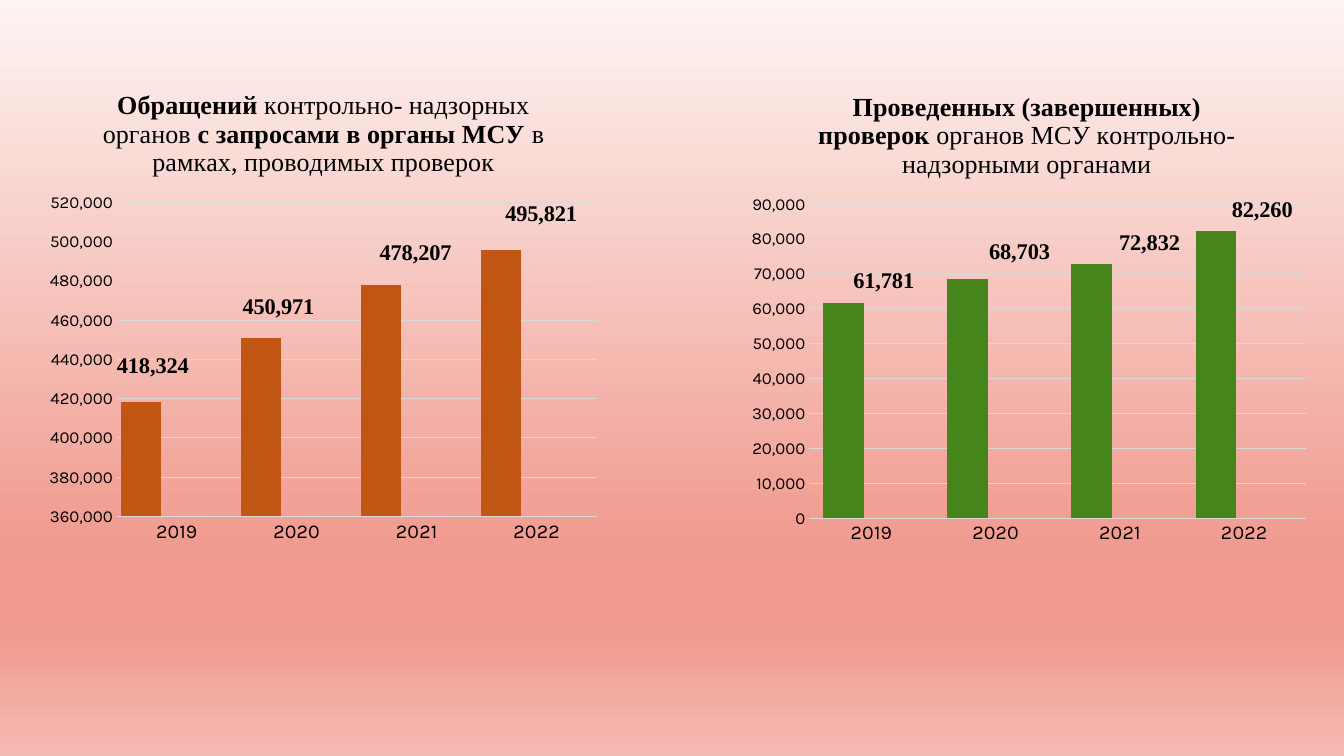
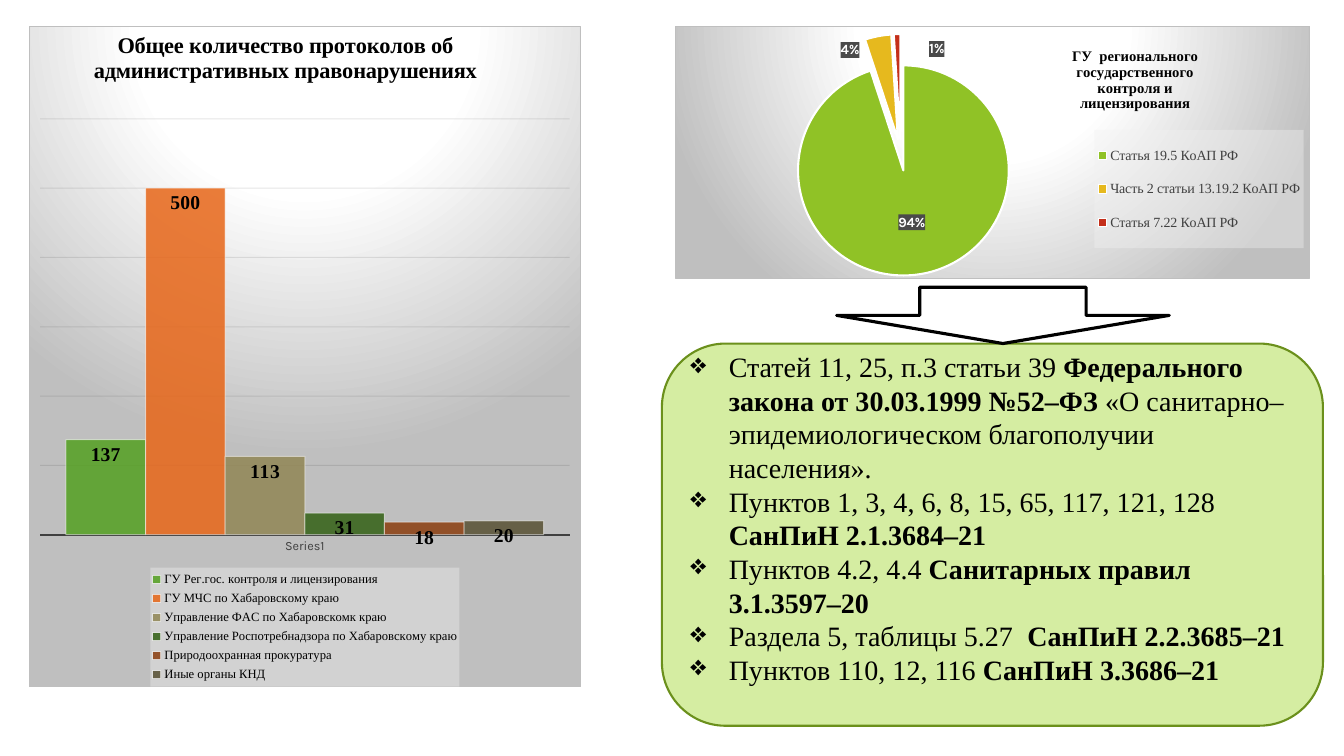
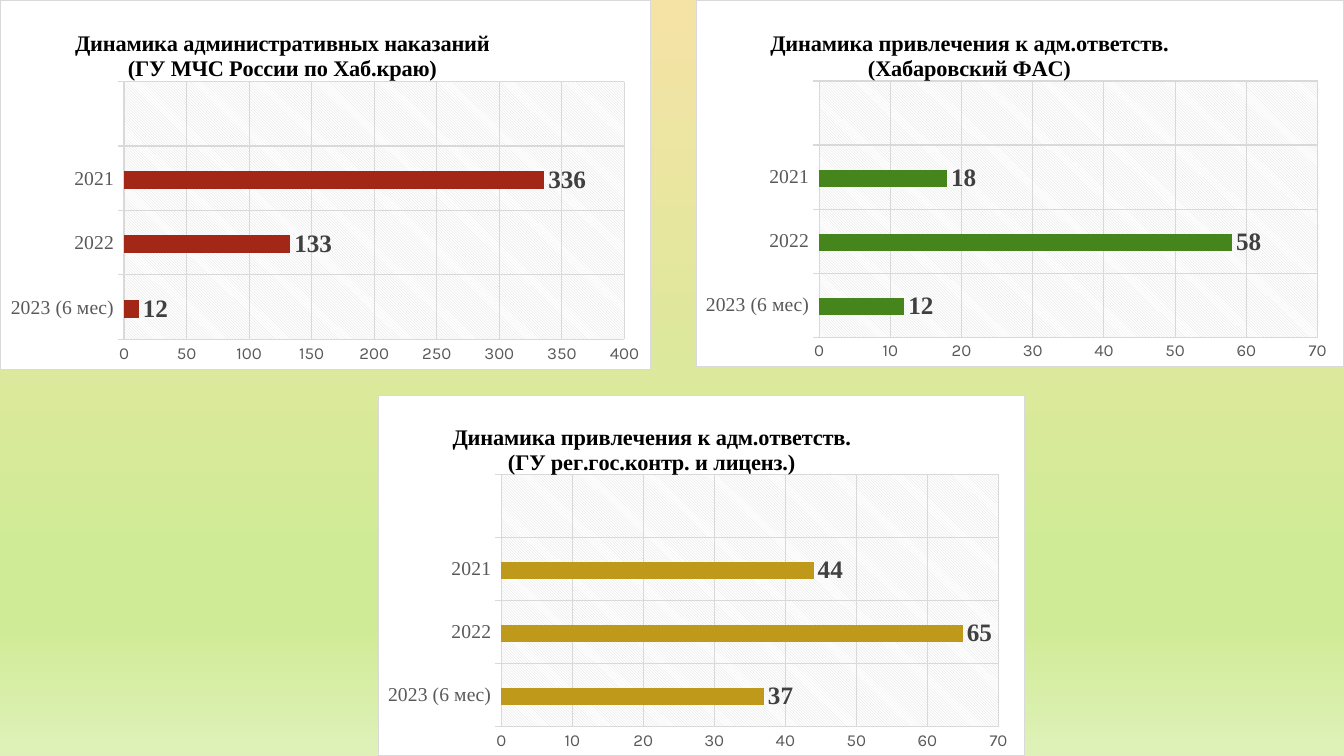
"""Three slides of charts on inspections, protocols and penalties."""
from pptx import Presentation
from pptx.chart.data import CategoryChartData
from pptx.dml.color import RGBColor
from pptx.enum.chart import XL_CHART_TYPE as Kind
from pptx.enum.chart import XL_LABEL_POSITION as LabelPlace
from pptx.enum.chart import XL_LEGEND_POSITION as LegendPlace
from pptx.enum.chart import XL_TICK_MARK as Tick
from pptx.enum.shapes import MSO_SHAPE as Shape
from pptx.enum.text import MSO_ANCHOR as Anchor
from pptx.enum.text import PP_ALIGN as Align
from pptx.oxml import parse_xml
from pptx.oxml.ns import nsdecls, qn
from pptx.util import Inches, Pt

BLACK = RGBColor(0x00, 0x00, 0x00)
WHITE = RGBColor(0xFF, 0xFF, 0xFF)
INK = RGBColor(0x40, 0x40, 0x40)
GREY = RGBColor(0x59, 0x59, 0x59)
RULE = RGBColor(0xD9, 0xD9, 0xD9)
NEAR_BLACK = RGBColor(0x0D, 0x0D, 0x0D)
RUST = RGBColor(0xC0, 0x55, 0x14)
GREEN = RGBColor(0x46, 0x85, 0x1B)
RED = RGBColor(0xA3, 0x27, 0x16)
GOLD = RGBColor(0xBF, 0x99, 0x19)
LEAF = RGBColor(0x54, 0xA0, 0x21)
ORANGE = RGBColor(0xE7, 0x66, 0x18)
KHAKI = RGBColor(0x91, 0x86, 0x55)
FOREST = RGBColor(0x32, 0x60, 0x14)
BROWN = RGBColor(0x8B, 0x3D, 0x0E)
OLIVE = RGBColor(0x57, 0x50, 0x33)
LIME = RGBColor(0x90, 0xC2, 0x26)
YELLOW = RGBColor(0xE6, 0xB9, 0x1E)
SCARLET = RGBColor(0xC4, 0x2F, 0x1A)
PALE_LIME = RGBColor(0xD5, 0xED, 0xA2)
MOSS = RGBColor(0x6B, 0x90, 0x1C)
SERIF, SANS = "Times New Roman", "Karla"

SPACES = nsdecls("c", "a")
STOP = '<a:gs pos="{}000"><a:srgbClr val="{}"/></a:gs>'
PAGE_FILL = ('<p:bg ' + nsdecls("p", "a") + '><p:bgPr><a:gradFill rotWithShape="1"><a:gsLst>{}</a:gsLst>'
             '<a:lin ang="5400000" scaled="0"/></a:gradFill><a:effectLst/></p:bgPr></p:bg>')
FILLED = '<c:spPr ' + SPACES + '>{}</c:spPr>'
SOLID = '<a:solidFill><a:srgbClr val="{}"/></a:solidFill>'
BORDER = '<a:ln w="9525">' + SOLID + '</a:ln>'
CLEAR = FILLED.format('<a:noFill/><a:ln><a:noFill/></a:ln>')
CARD = FILLED.format(SOLID.format("FFFFFF") + BORDER.format("D9D9D9"))
GLOW = FILLED.format(
    '<a:gradFill><a:gsLst>'
    + "".join(STOP.format(*stop) for stop in ((0, "FFFFFF"), (39, "FFFFFF"), (100, "BFBFBF")))
    + '</a:gsLst><a:path path="circle"><a:fillToRect l="50000" t="-80000" r="50000" b="180000"/>'
    '</a:path></a:gradFill>' + BORDER.format("BFBFBF"))
HATCH = FILLED.format(
    '<a:pattFill prst="ltDnDiag"><a:fgClr><a:srgbClr val="D9D9D9"/></a:fgClr>'
    '<a:bgClr><a:srgbClr val="FFFFFF"/></a:bgClr></a:pattFill><a:ln><a:noFill/></a:ln>')
VEIL = FILLED.format('<a:solidFill><a:srgbClr val="F2F2F2"><a:alpha val="39000"/></a:srgbClr></a:solidFill>')
TAG = FILLED.format(SOLID.format("4A4A4A"))
ALPHA = '<a:alpha ' + nsdecls("a") + ' val="{}000"/>'
LAYOUT = '<c:layout ' + SPACES + '><c:manualLayout>{}</c:manualLayout></c:layout>'
EDGES = '<c:xMode val="edge"/><c:yMode val="edge"/>'
SPOT = '<c:x val="{}"/><c:y val="{}"/>'
SHIFT = LAYOUT.format(SPOT)
TITLE_SPOT = LAYOUT.format(EDGES + SPOT)
AREA = EDGES + SPOT + '<c:w val="{}"/><c:h val="{}"/>'
LEGEND_AREA = LAYOUT.format(AREA)
PLOT_AREA = LAYOUT.format('<c:layoutTarget val="inner"/>' + AREA)

deck = Presentation()
deck.slide_width, deck.slide_height = Inches(13.33), Inches(7.5)
COL, ROW = deck.slide_width / 160, deck.slide_height / 90


def set_font(font, size, color, bold=False, name=SERIF):
    font.size, font.bold, font.name = Pt(size), bold, name
    font.color.rgb = color


def place_chart(page, kind, place, cats, series, title, size, title_at, plot_at, backdrop, digits="#,##0"):
    data = CategoryChartData(number_format=digits)
    data.categories = cats
    for name, values in series:
        data.add_series(name, values)
    left, top, width, height = place
    chart = page.shapes.add_chart(kind, int(left * COL), int(top * ROW),
                                  int(width * COL), int(height * ROW), data).chart
    set_font(chart.font, 10, BLACK, name=SANS)
    chart.has_legend = False
    chart.has_title = True
    frame = chart.chart_title.text_frame
    for index, line in enumerate(title):
        para = frame.add_paragraph() if index else frame.paragraphs[0]
        para.alignment = Align.CENTER
        for text, bold in line:
            span = para.add_run()
            span.text = text
            set_font(span.font, size, BLACK, bold)
    heading = chart.chart_title._element
    body = chart._chartSpace.find(qn("c:chart"))
    area = body.find(qn("c:plotArea"))
    for owner in (heading, area):
        for stale in owner.findall(qn("c:layout")):
            owner.remove(stale)
    heading.find(qn("c:tx")).addnext(parse_xml(TITLE_SPOT.format(*title_at)))
    area.insert(0, parse_xml(PLOT_AREA.format(*plot_at)))
    body.addnext(parse_xml(backdrop))
    if kind != Kind.PIE:
        chart.plots[0].vary_by_categories = False
        cat_axis, val_axis = chart.category_axis, chart.value_axis
        cat_axis.major_tick_mark = val_axis.major_tick_mark = Tick.NONE
        val_axis.has_major_gridlines = True
        val_axis.format.line.fill.background()
        for line in (cat_axis.format.line, val_axis.major_gridlines.format.line):
            line.color.rgb, line.width = RULE, Pt(0.75)
    return chart


pages = []
for stops in (((0, "FDF4F2"), (74, "F0998D"), (83, "F0998D"), (100, "F5BBB3")),
              ((0, "FFFFFF"), (100, "FFFFFF")),
              ((0, "F5E3A5"), (74, "D0EB96"), (83, "D0EB96"), (100, "DFF1B9"))):
    page = deck.slides.add_slide(deck.slide_layouts[6])
    fill = "".join(STOP.format(*stop) for stop in stops)
    page._element.cSld.insert(0, parse_xml(PAGE_FILL.format(fill)))
    pages.append(page)
requests_page, protocols_page, penalties_page = pages

YEARS = ("2019", "2020", "2021", "2022")
SPARE = [("Series 2", (None,) * 4), ("Series 3", (None,) * 4)]
REQUESTS_TITLE = [[("Обращений", True), (" контрольно- надзорных органов ", False),
                   ("с запросами в органы МСУ", True), (" в рамках, проводимых проверок", False)]]
CHECKS_TITLE = [[("Проведенных (завершенных) проверок", True),
                 (" органов МСУ контрольно- надзорными органами", False)]]
for place, values, title, title_at, plot_at, scale, gap, overlap, color, shifts in (
        ((4.4, 8.6, 68, 57.5), (418324, 450971, 478207, 495821), REQUESTS_TITLE, (0.11, 0.03),
         (0.14, 0.27, 0.84, 0.65), (360000, 520000, 20000), 23, 11, RUST,
         ((0.02, -0.04), (0.03, -0.03), (0.06, -0.03), (0.07, -0.04))),
        ((88.1, 8.8, 68.8, 57.5), (61781, 68703, 72832, 82260), CHECKS_TITLE, (0.13, 0.03),
         (0.12, 0.27, 0.86, 0.65), (0, 90000, 10000), 66, 31, GREEN,
         ((0.07, -0.01), (0.09, -0.02), (0.1, -0.01), (0.08, -0.01)))):
    chart = place_chart(requests_page, Kind.COLUMN_CLUSTERED, place, YEARS,
                        [("Series 1", values)] + SPARE, title, 18.6, title_at, plot_at, CLEAR)
    plot, axis = chart.plots[0], chart.value_axis
    plot.gap_width, plot.overlap = gap, overlap
    axis.minimum_scale, axis.maximum_scale, axis.major_unit = scale
    set_font(axis.tick_labels.font, 12, BLACK, name=SANS)
    set_font(chart.category_axis.tick_labels.font, 14, BLACK, name=SANS)
    bars = plot.series[0]
    bars.format.fill.solid()
    bars.format.fill.fore_color.rgb = color
    for index in range(len(YEARS)):
        label = bars.points[index].data_label
        set_font(label.font, 16, BLACK, True)
        label.position = LabelPlace.OUTSIDE_END
    for mark, shift in zip(bars._element.iter(qn("c:dLbl")), shifts):
        mark.find(qn("c:idx")).addnext(parse_xml(SHIFT.format(*shift)))
    for leader in bars._element.iter(qn("c:showLeaderLines")):
        leader.set("val", "0")

BODIES = (("ГУ Рег.гос. контроля и лицензирования", 137, LEAF),
          ("ГУ МЧС по Хабаровскому краю", 500, ORANGE),
          ("Управление ФАС по Хабаровскомк краю", 113, KHAKI),
          ("Управление Роспотребнадзора по Хабаровскому краю", 31, FOREST),
          ("Природоохранная прокуратура", 18, BROWN),
          ("Иные органы КНД", 20, OLIVE))
protocols = place_chart(
    protocols_page, Kind.COLUMN_CLUSTERED, (3.4, 3.1, 65.8, 78.7), ("Series1",),
    [(name, (count,)) for name, count, color in BODIES],
    [[("Общее количество протоколов об административных правонарушениях", True)]],
    16, (0.11, 0), (0.02, 0.14, 0.96, 0.63), GLOW)
plot, axis = protocols.plots[0], protocols.value_axis
plot.gap_width, plot.overlap = 65, 0
axis.minimum_scale, axis.maximum_scale, axis.major_unit = 0, 600, 100
axis.visible = False
grid = axis.major_gridlines.format.line
grid.color.rgb = NEAR_BLACK
for tint in axis._element.find(qn("c:majorGridlines")).iter(qn("a:srgbClr")):
    tint.append(parse_xml(ALPHA.format(10)))
base = protocols.category_axis
base.format.line.color.rgb, base.format.line.width = INK, Pt(1.5)
set_font(base.tick_labels.font, 9, INK, name=SANS)
for bar, (name, count, color) in zip(plot.series, BODIES):
    bar.format.fill.solid()
    bar.format.fill.fore_color.rgb = color
    bar.format.line.color.rgb, bar.format.line.width = WHITE, Pt(0.75)
    for tint, share in zip(bar._element.iter(qn("a:srgbClr")), (85, 50)):
        tint.append(parse_xml(ALPHA.format(share)))
    labels = bar.data_labels
    labels.show_value, labels.position = True, LabelPlace.INSIDE_END
    set_font(labels.font, 14, BLACK, True)

ARTICLES = ("Статья 19.5 КоАП РФ", "Часть 2 статьи 13.19.2 КоАП РФ", "Статья 7.22 КоАП РФ")
PIE_TITLE = ("ГУ  регионального", "государственного", "контроля и", "лицензирования")
articles = place_chart(
    protocols_page, Kind.PIE, (80.4, 3.1, 75.6, 30.1), ARTICLES, [("Series 1", (94, 4, 1))],
    [[(line, True)] for line in PIE_TITLE], 10.5, (0.62, 0.07), (0.07, 0.03, 0.57, 0.96), GLOW,
    '0"%"')
slices = articles.plots[0].series[0]
slices._element.find(qn("c:tx")).addnext(parse_xml('<c:explosion ' + SPACES + ' val="15"/>'))
labels = slices.data_labels
labels.show_value, labels.show_percentage = True, False
labels.position = LabelPlace.CENTER
set_font(labels.font, 10, WHITE, True, SANS)
for index, color in enumerate((LIME, YELLOW, SCARLET)):
    look = slices.points[index].format
    look.fill.solid()
    look.fill.fore_color.rgb = color
    look.line.color.rgb, look.line.width = WHITE, Pt(1.5)
for index in (1, 2):
    label = slices.points[index].data_label
    set_font(label.font, 10, WHITE, True, SANS)
    label.position = LabelPlace.CENTER
for mark, shift in zip(slices._element.iter(qn("c:dLbl")), ((-0.06, -0.15), (0.06, -0.15))):
    mark.find(qn("c:idx")).addnext(parse_xml(SHIFT.format(*shift)))
    mark.find(qn("c:txPr")).addprevious(parse_xml(TAG))
labels._element.find(qn("c:txPr")).addprevious(parse_xml(TAG))

for chart, side, size, color, spot in (
        (protocols, LegendPlace.BOTTOM, 9, BLACK, (0.22, 0.82, 0.56, 0.18)),
        (articles, LegendPlace.RIGHT, 10, INK, (0.66, 0.41, 0.33, 0.47))):
    chart.has_legend = True
    legend = chart.legend
    legend.position, legend.include_in_layout = side, False
    set_font(legend.font, size, color)
    key = legend._element
    for stale in key.findall(qn("c:layout")):
        key.remove(stale)
    key.find(qn("c:overlay")).addprevious(parse_xml(LEGEND_AREA.format(*spot)))
    key.find(qn("c:txPr")).addprevious(parse_xml(VEIL))

boxes = []
for outline, (left, top, width, height), fill, edge, weight in (
        (Shape.ROUNDED_RECTANGLE, (78.8, 40.9, 78.7, 45.5), PALE_LIME, MOSS, 1.5),
        (Shape.DOWN_ARROW, (99.6, 34.2, 39.6, 6.7), WHITE, BLACK, 2.25)):
    box = protocols_page.shapes.add_shape(outline, int(left * COL), int(top * ROW),
                                          int(width * COL), int(height * ROW))
    box.shadow.inherit = False
    box.fill.solid()
    box.fill.fore_color.rgb = fill
    box.line.color.rgb, box.line.width = edge, Pt(weight)
    boxes.append(box)
LAWS = ((("Статей 11, 25, п.3 статьи 39 ", False), ("Федерального закона от 30.03.1999 №52–ФЗ", True),
         (" «О санитарно– эпидемиологическом благополучии населения».", False)),
        (("Пунктов 1, 3, 4, 6, 8, 15, 65, 117, 121, 128 ", False), ("СанПиН 2.1.3684–21", True)),
        (("Пунктов 4.2, 4.4 ", False), ("Санитарных правил 3.1.3597–20", True)),
        (("Раздела 5, таблицы 5.27  ", False), ("СанПиН 2.2.3685–21", True)),
        (("Пунктов 110, 12, 116 ", False), ("СанПиН 3.3686–21", True)))
frame = boxes[0].text_frame
frame.word_wrap, frame.vertical_anchor = True, Anchor.MIDDLE
frame.margin_bottom = int(4.6 * ROW)
for index, law in enumerate(LAWS):
    para = frame.add_paragraph() if index else frame.paragraphs[0]
    para.alignment = Align.LEFT
    for text, bold in law:
        span = para.add_run()
        span.text = text
        set_font(span.font, 20, BLACK, bold)
    marks = para._p.get_or_add_pPr()
    marks.set("marL", str(Inches(0.38)))
    marks.set("indent", str(-Inches(0.38)))
    marks.append(parse_xml('<a:buChar ' + nsdecls("a") + ' char="❖"/>'))

PERIODS = ("2023 (6 мес)", "2022", "2021", "")
for place, values, title, top_value, step, color in (
        ((0, 0, 77.5, 44), (12, 133, 336, None),
         ("Динамика административных наказаний", "(ГУ МЧС России по Хаб.краю)"), 400, 50, RED),
        ((82.8, 0, 77.2, 43.7), (12, 58, 18, None),
         ("Динамика привлечения к адм.ответств.", "(Хабаровский ФАС)"), 70, 10, GREEN),
        ((45, 47, 77, 43), (37, 65, 44, None),
         ("Динамика привлечения к адм.ответств.", "(ГУ рег.гос.контр. и лиценз.)"), 70, 10, GOLD)):
    chart = place_chart(penalties_page, Kind.BAR_CLUSTERED, place, PERIODS,
                        [("Series 1", values)] + SPARE, [[(line, True)] for line in title],
                        16, (0.11, 0.07), (0.19, 0.22, 0.77, 0.7), CARD)
    plot, axis, base = chart.plots[0], chart.value_axis, chart.category_axis
    plot.gap_width, plot.overlap = 247, 92
    axis.minimum_scale, axis.maximum_scale, axis.major_unit = 0, top_value, step
    set_font(axis.tick_labels.font, 12, GREY, name=SANS)
    set_font(base.tick_labels.font, 14, GREY)
    base.major_tick_mark, base.has_major_gridlines = Tick.OUTSIDE, True
    grid = base.major_gridlines.format.line
    grid.color.rgb, grid.width = RULE, Pt(0.75)
    chart._chartSpace.find(qn("c:chart")).find(qn("c:plotArea")).append(parse_xml(HATCH))
    bars = plot.series[0]
    bars.format.fill.solid()
    bars.format.fill.fore_color.rgb = color
    labels = bars.data_labels
    labels.show_value, labels.position = True, LabelPlace.OUTSIDE_END
    set_font(labels.font, 18, INK, True)

deck.save("out.pptx")
